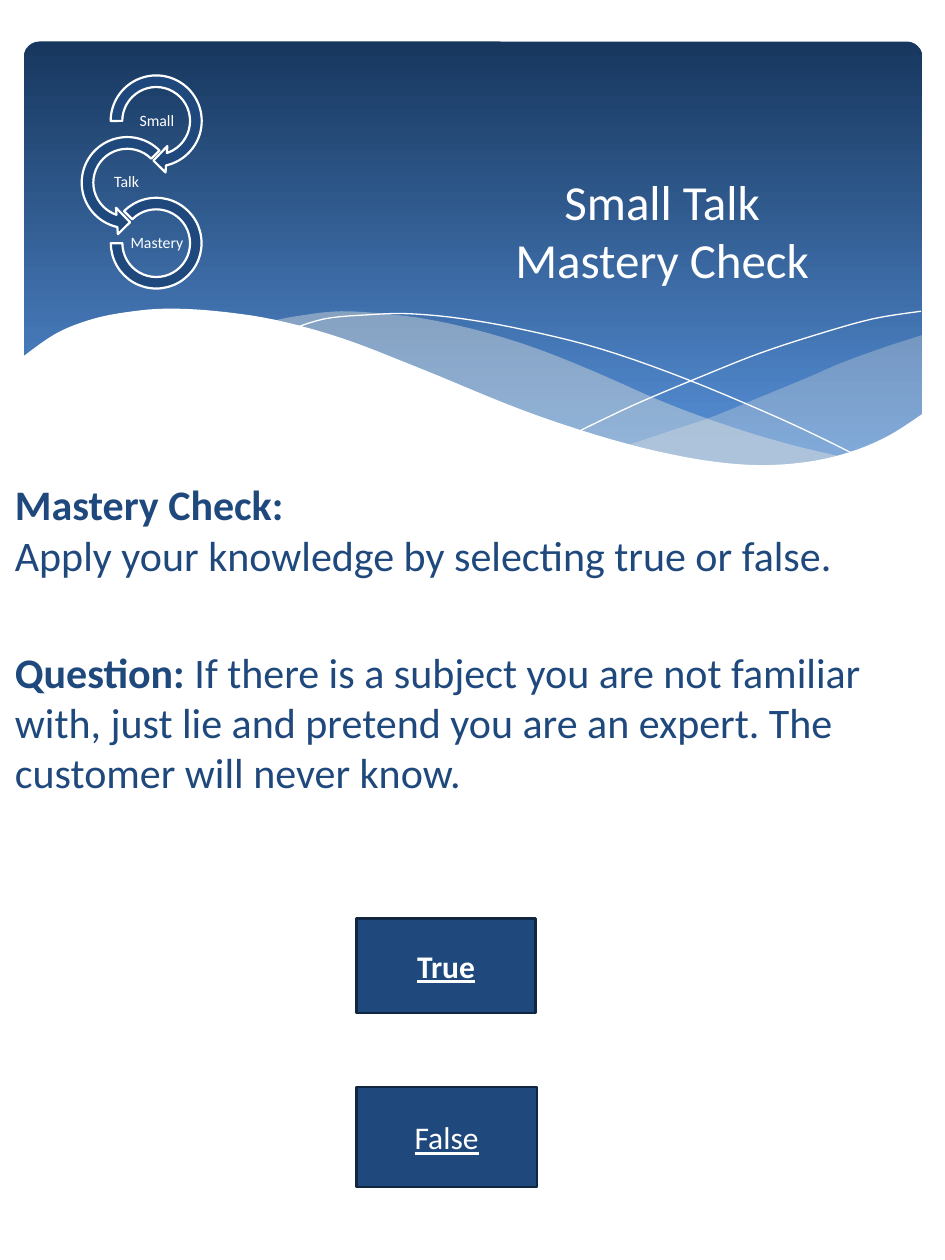
from lxml import etree
from pptx import Presentation
from pptx.dml.color import RGBColor
from pptx.enum.shapes import MSO_SHAPE as Preset
from pptx.enum.text import MSO_ANCHOR as Anchor, MSO_AUTO_SIZE as AutoSize, PP_ALIGN as Align
from pptx.oxml.ns import qn
from pptx.util import Inches, Pt

COLORS = {k: RGBColor.from_string(v) for k, v in {
    "navy": "1F497D", "edge": "102641", "white": "FFFFFF", "cream": "EEECE1",
    "sky_top": "17375E", "sky_bottom": "558ED5"}.items()}


def spline(knots, steps=5):
    """Return points on a smooth curve through the knots."""
    padded = [knots[0], *knots, knots[-1]]
    points = [knots[0]]
    for a, b, c, d in zip(padded, padded[1:], padded[2:], padded[3:]):
        for step in range(1, steps + 1):
            t = step / steps
            points.append(tuple(
                (2 * q + (r - p) * t + (2 * p - 5 * q + 4 * r - s) * t ** 2
                 + (3 * q - p - 3 * r + s) * t ** 3) / 2
                for p, q, r, s in zip(a, b, c, d)))
    return points


def add_run(para, text, size, color, bold=False, underline=None):
    span = para.add_run()
    span.text = text
    span.font.name = "Calibri"
    span.font.size = Pt(size)
    span.font.color.rgb = COLORS[color]
    span.font.bold = bold
    span.font.underline = underline


deck = Presentation()
deck.slide_width, deck.slide_height = Inches(7.5), Inches(10)
slide = deck.slides.add_slide(deck.slide_layouts[5])
shapes = slide.shapes

# Header panel
panel = shapes.add_shape(Preset.ROUNDED_RECTANGLE, Inches(0.19), Inches(0.33),
                         Inches(7.13), Inches(3.6))
panel.adjustments[0] = 0.034
panel.shadow.inherit = False
panel.line.fill.background()
panel.fill.gradient()
panel.fill.gradient_angle = 270
for stop, position, color in zip(panel.fill.gradient_stops, (0, 0.9), ("sky_top", "sky_bottom")):
    stop.position = position
    stop.color.rgb = COLORS[color]

# Waves: points, fill colour (None for a bare line), opacity in percent
right_wave = (spline([(7.32, 2.66), (7.01, 2.76), (6.68, 2.88), (6.45, 2.98), (6.04, 3.15),
                      (5.65, 3.31), (5.29, 3.43), (4.96, 3.54)])
              + spline([(4.96, 3.54), (5.29, 3.61), (5.68, 3.68), (6.02, 3.7), (6.4, 3.68),
                        (6.73, 3.6), (7.02, 3.49), (7.32, 3.29)]))
middle_wave = (spline([(6.7, 3.63), (6.28, 3.53), (5.81, 3.39), (5.29, 3.2), (4.72, 2.95),
                       (4.27, 2.77), (3.86, 2.64), (3.48, 2.55), (3.15, 2.5), (2.71, 2.47),
                       (2.35, 2.51), (2.15, 2.55)])
               + spline([(2.15, 2.55), (2.42, 2.61), (2.87, 2.76), (3.37, 2.95), (3.97, 3.21),
                         (4.51, 3.4), (4.99, 3.55), (5.42, 3.65), (5.8, 3.7), (6.13, 3.71),
                         (6.43, 3.69), (6.7, 3.63)]))
falling_line = spline([(2.32, 2.61), (2.58, 2.53), (2.9, 2.5), (3.24, 2.49), (3.67, 2.53),
                       (4.17, 2.62), (4.77, 2.77), (5.45, 3.01), (6.23, 3.34), (6.81, 3.62)])
rising_line = spline([(4.6, 3.42), (5.04, 3.21), (5.61, 2.97), (6.04, 2.8), (6.5, 2.65),
                      (6.93, 2.53), (7.31, 2.47)])
white_wave = spline([(7.33, 3.28), (7.05, 3.46), (6.74, 3.59), (6.38, 3.67), (5.95, 3.69),
                     (5.45, 3.63), (4.86, 3.49), (4.16, 3.26), (3.35, 2.93), (2.73, 2.69),
                     (2.19, 2.54), (1.72, 2.47), (1.32, 2.45), (0.99, 2.48), (0.71, 2.54),
                     (0.44, 2.65), (0.17, 2.84)]) + [(0.17, 4.39), (7.33, 4.39)]

for points, fill, opacity in ((right_wave, "cream", 29), (middle_wave, "cream", 40),
                              (falling_line, None, 100), (rising_line, None, 100),
                              (white_wave, "white", 100)):
    points = [(Inches(x), Inches(y)) for x, y in points]
    builder = shapes.build_freeform(*points[0])
    builder.add_line_segments(points[1:], close=fill is not None)
    wave = builder.convert_to_shape()
    wave.shadow.inherit = False
    if fill is None:
        wave.fill.background()
        wave.line.color.rgb = COLORS["white"]
        wave.line.width = Pt(0)
        continue
    wave.line.fill.background()
    wave.fill.solid()
    wave.fill.fore_color.rgb = COLORS[fill]
    if opacity < 100:
        tint = wave.fill._xPr.find(qn("a:solidFill"))[0]
        etree.SubElement(tint, qn("a:alpha")).set("val", str(opacity * 1000))

# Question text
body = shapes.add_textbox(Inches(0.02), Inches(3.75), Inches(7.5), Inches(2.75))
frame = body.text_frame
frame.word_wrap = True
intro = frame.paragraphs[0]
intro.space_before = Pt(4.8)
add_run(intro, "Mastery Check: ", 24, "navy", bold=True)
intro.add_line_break()
add_run(intro, "Apply your knowledge by selecting true or false.", 24, "navy")
question = frame.add_paragraph()
question.space_before = Pt(38)
add_run(question, "Question: ", 24, "navy", bold=True)
add_run(question, "If there is a subject you are not familiar with, just lie and pretend "
                  "you are an expert. The customer will never know.", 24, "navy")

# Title, brought in front of the panel
title = shapes.title
title._element.getparent().append(title._element)
title.left, title.top = Inches(3.17), Inches(1.08)
title.width, title.height = Inches(4.17), Inches(1.49)
frame = title.text_frame
frame.word_wrap = True
frame.auto_size = AutoSize.NONE
frame.vertical_anchor = Anchor.MIDDLE
heading = frame.paragraphs[0]
heading.alignment = Align.CENTER
add_run(heading, "Small Talk", 28, "white")
heading.add_line_break()
add_run(heading, "Mastery Check", 28, "white")

# Chain of arrows: preset, adjustments, left, top, size, label, label left, label top
chain = (
    (Preset.CIRCULAR_ARROW, (0.11, 11.423, 45, 108, 0.125), 0.82, 0.54, 0.84, "Small", 1.01, 0.85),
    (Preset.LEFT_CIRCULAR_ARROW, (0.11, 11.423, 63, 189, 0.125), 0.59, 1.03, 0.84,
     "Talk", 0.77, 1.33),
    (Preset.BLOCK_ARC, (135, 108, 0.127), 0.88, 1.57, 0.72, "Mastery", 1.01, 1.82),
)
for preset, adjustments, left, top, size, label, label_left, label_top in chain:
    ring = shapes.add_shape(preset, Inches(left), Inches(top), Inches(size), Inches(size))
    for index, value in enumerate(adjustments):
        ring.adjustments[index] = value
    ring.shadow.inherit = False
    ring.fill.solid()
    ring.fill.fore_color.rgb = COLORS["navy"]
    ring.line.color.rgb = COLORS["white"]
    ring.line.width = Pt(1.25)

    box = shapes.add_textbox(Inches(label_left), Inches(label_top), Inches(0.47), Inches(0.23))
    frame = box.text_frame
    frame.word_wrap = True
    frame.vertical_anchor = Anchor.MIDDLE
    frame.margin_left = frame.margin_right = Inches(0.01)
    frame.margin_top = frame.margin_bottom = Inches(0.01)
    para = frame.paragraphs[0]
    para.alignment = Align.CENTER
    para.line_spacing = 0.9
    add_run(para, label, 9, "white")

# Answer buttons
for answer, top, width, height, bold in (("True", 7.29, 1.42, 0.75, True),
                                         ("False", 8.63, 1.43, 0.79, False)):
    button = shapes.add_shape(Preset.RECTANGLE, Inches(2.83), Inches(top),
                              Inches(width), Inches(height))
    button.shadow.inherit = False
    button.fill.solid()
    button.fill.fore_color.rgb = COLORS["navy"]
    button.line.color.rgb = COLORS["edge"]
    button.line.width = Pt(1.25)
    button.text_frame.vertical_anchor = Anchor.MIDDLE
    para = button.text_frame.paragraphs[0]
    para.alignment = Align.CENTER
    add_run(para, answer, 18, "white", bold, underline=True)

deck.save("out.pptx")
